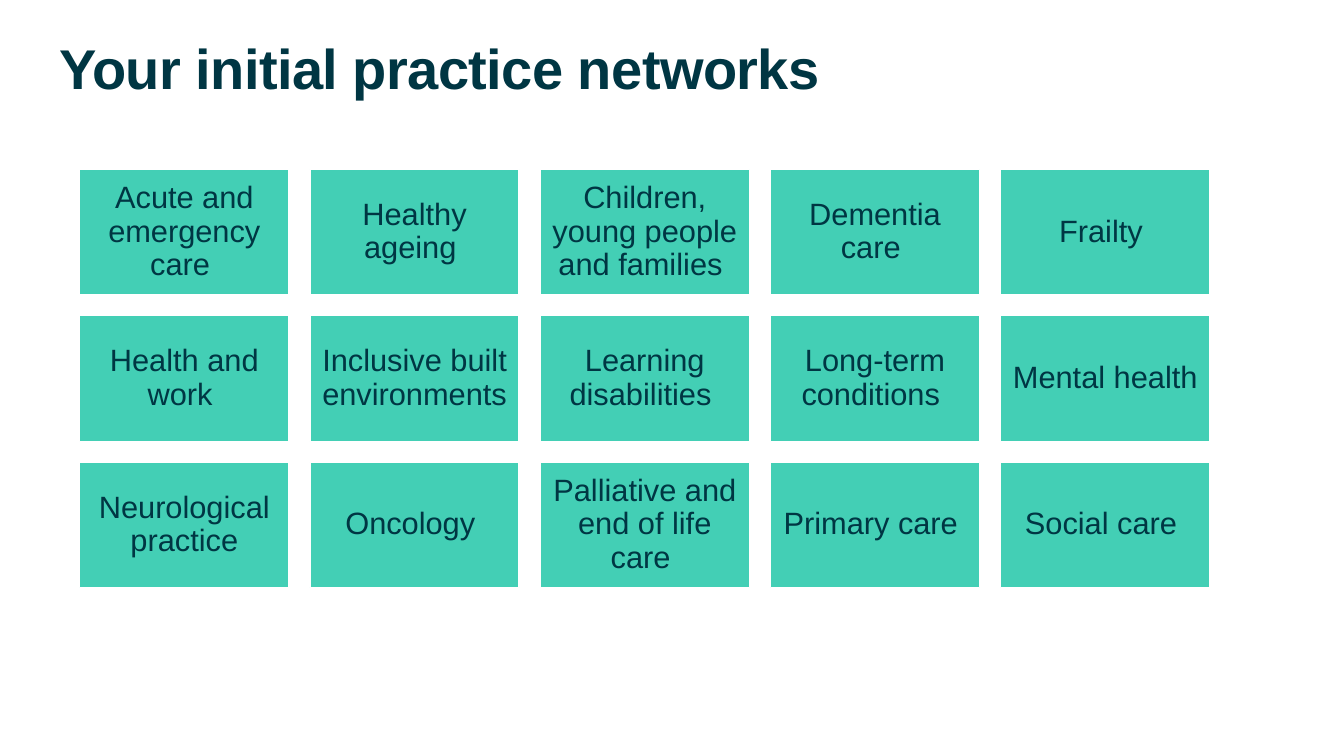
from pptx import Presentation
from pptx import util as u
from pptx.dml.color import RGBColor
from pptx.enum import shapes, text

NAVY = RGBColor(0x00, 0x36, 0x43)
TEAL = RGBColor(0x43, 0xCF, 0xB5)
WHITE = RGBColor(0xFF, 0xFF, 0xFF)
FONT = "Arial"

COLUMNS = 5
GAP = 0.1  # share of a tile's width
TILE_RATIO = 0.6  # tile height to width

NETWORKS = [
    "Acute and emergency care ", "Healthy ageing ",
    "Children, young people and families ", "Dementia care ", "Frailty ",
    "Health and work ", "Inclusive built environments ",
    "Learning disabilities ", "Long-term conditions ", "Mental health ",
    "Neurological practice", "Oncology ",
    "Palliative and end of life care ", "Primary care ", "Social care ",
]


def set_text(frame, words, size, inset, bold=False):
    """Fill a text frame with one formatted paragraph."""
    frame.word_wrap = True
    frame.auto_size = text.MSO_AUTO_SIZE.NONE
    frame.margin_left = frame.margin_right = u.Inches(inset)
    frame.margin_top = frame.margin_bottom = u.Inches(inset)
    frame.text = words
    para = frame.paragraphs[0]
    para.line_spacing = 0.9
    para.space_before = u.Pt(0)
    span = para.runs[0]
    span.font.name = FONT
    span.font.size = u.Pt(size)
    span.font.bold = bold
    span.font.color.rgb = NAVY
    return para


def place_title(page, left, top, width, height):
    title = page.shapes.title
    title.left, title.top = u.Inches(left), u.Inches(top)
    title.width, title.height = u.Inches(width), u.Inches(height)
    para = set_text(title.text_frame, "Your initial practice networks", 40, 0, True)
    para.alignment = text.PP_ALIGN.LEFT
    para.runs[0].font._element.set("spc", "-40")  # tighter letters
    title.text_frame.vertical_anchor = text.MSO_ANCHOR.TOP


def place_tiles(page, left, top, width):
    # Tile size follows from the width shared by the columns and their gaps
    tile_width = width / (COLUMNS + GAP * (COLUMNS - 1))
    tile_height = tile_width * TILE_RATIO
    gap = tile_width * GAP
    for index, name in enumerate(NETWORKS):
        row, column = divmod(index, COLUMNS)
        tile = page.shapes.add_shape(
            shapes.MSO_SHAPE.RECTANGLE,
            u.Inches(left + column * (tile_width + gap)),
            u.Inches(top + row * (tile_height + gap)),
            u.Inches(tile_width), u.Inches(tile_height))
        tile.shadow.inherit = False
        tile.fill.solid()
        tile.fill.fore_color.rgb = TEAL
        tile.line.color.rgb = WHITE
        tile.line.width = u.Pt(1)
        para = set_text(tile.text_frame, name, 22, 0.09)
        para.alignment = text.PP_ALIGN.CENTER
        tile.text_frame.vertical_anchor = text.MSO_ANCHOR.MIDDLE


def main():
    deck = Presentation()
    deck.slide_width, deck.slide_height = u.Inches(13.33), u.Inches(7.5)
    page = deck.slides.add_slide(deck.slide_layouts[5])
    place_title(page, 0.59, 0.41, 12.2, 0.79)
    place_tiles(page, 0.79, 1.68, 11.21)
    deck.save("out.pptx")


if __name__ == "__main__":
    main()
